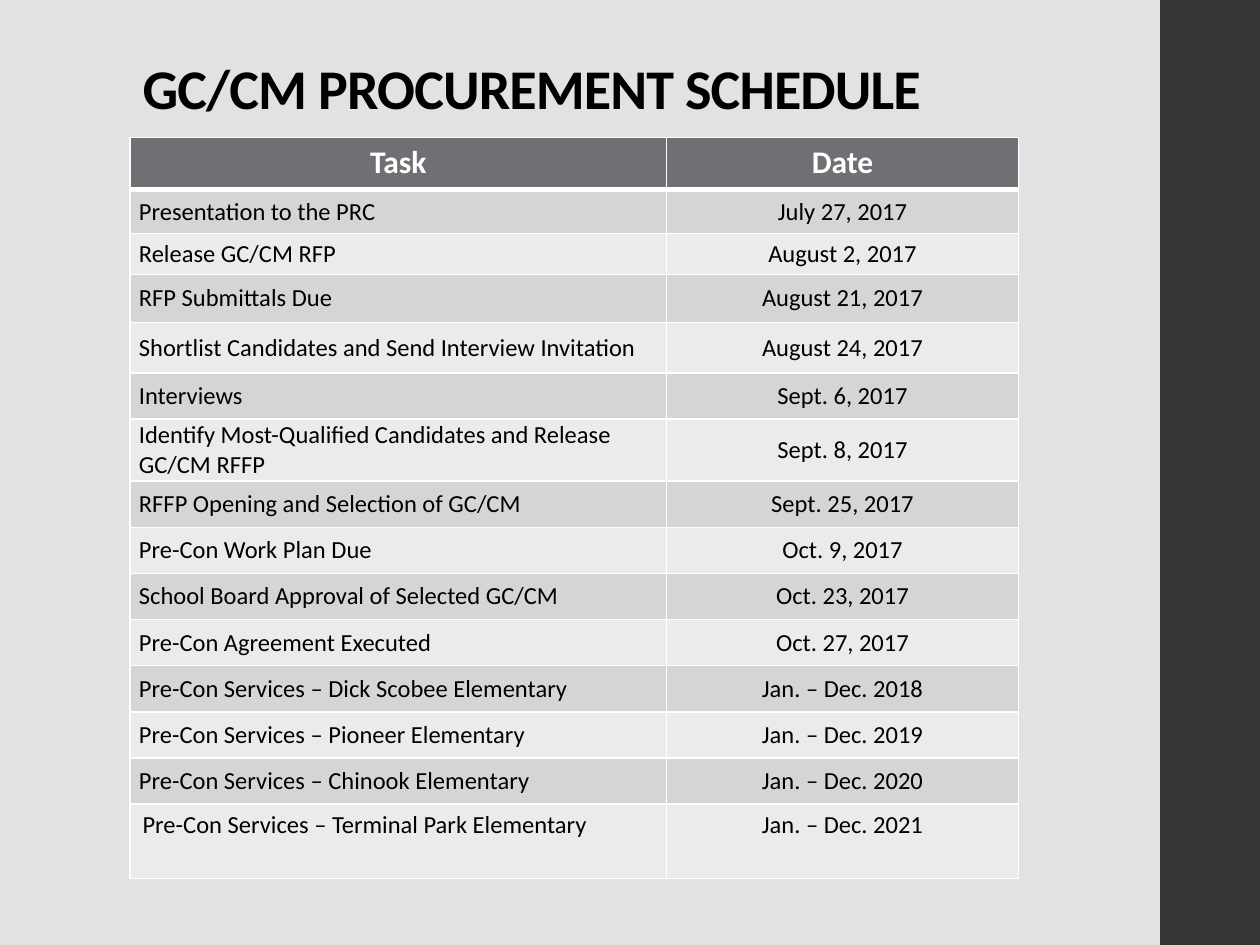
from pptx import Presentation
from pptx.dml.color import RGBColor
from pptx.enum.shapes import MSO_SHAPE
from pptx.enum.text import MSO_ANCHOR, MSO_AUTO_SIZE, PP_ALIGN
from pptx.oxml.ns import qn
from pptx.util import Cm, Pt
from lxml.etree import SubElement

COLORS = {
    "background": "E2E2E3",
    "sidebar": "353537",
    "header": "6F6F74",
    "odd": "D5D5D6",
    "even": "EBEBEB",
    "white": "FFFFFF",
    "black": "000000",
}
SCHEDULE = [
    ("Task", "Date", 1.05),
    ("Presentation to the PRC", "July 27, 2017", 0.89),
    ("Release GC/CM RFP", "August 2, 2017", 0.82),
    ("RFP Submittals Due", "August 21, 2017", 0.97),
    ("Shortlist Candidates and Send Interview Invitation", "August 24, 2017", 1.02),
    ("Interviews", "Sept. 6, 2017", 0.93),
    ("Identify Most-Qualified Candidates and Release GC/CM RFFP", "Sept. 8, 2017", 1.25),
    ("RFFP Opening and Selection of GC/CM", "Sept. 25, 2017", 0.93),
    ("Pre-Con Work Plan Due", "Oct. 9, 2017", 0.93),
    ("School Board Approval of Selected GC/CM", "Oct. 23, 2017", 0.93),
    ("Pre-Con Agreement Executed", "Oct. 27, 2017", 0.93),
    ("Pre-Con Services – Dick Scobee Elementary", "Jan. – Dec. 2018", 0.93),
    ("Pre-Con Services – Pioneer Elementary", "Jan. – Dec. 2019", 0.93),
    ("Pre-Con Services – Chinook Elementary", "Jan. – Dec. 2020", 0.93),
    ("Pre-Con Services – Terminal Park Elementary", "Jan. – Dec. 2021", 1.5),
]


def add_run(paragraph, text, size, color, bold):
    run = paragraph.add_run()
    run.text = text
    run.font.name = "Calibri"
    run.font.size = Pt(size)
    run.font.bold = bold
    run.font.color.rgb = RGBColor.from_string(COLORS[color])
    return run


def add_borders(cell, bottom_width):
    properties = cell._tc.get_or_add_tcPr()
    for side, width in (("L", 1), ("R", 1), ("T", 1), ("B", bottom_width)):
        line = SubElement(properties, qn(f"a:ln{side}"), w=str(Pt(width)))
        fill = SubElement(line, qn("a:solidFill"))
        SubElement(fill, qn("a:srgbClr"), val=COLORS["white"])


presentation = Presentation()
presentation.slide_width = Cm(25.4)
presentation.slide_height = Cm(19.05)
slide = presentation.slides.add_slide(presentation.slide_layouts[5])
slide.background.fill.solid()
slide.background.fill.fore_color.rgb = RGBColor.from_string(COLORS["background"])

sidebar = slide.shapes.add_shape(MSO_SHAPE.RECTANGLE, Cm(23.39), Cm(0), Cm(2.01), Cm(19.05))
sidebar.shadow.inherit = False
sidebar.fill.solid()
sidebar.fill.fore_color.rgb = RGBColor.from_string(COLORS["sidebar"])
sidebar.line.fill.background()

title = slide.shapes.title
title.left, title.top, title.width, title.height = Cm(2.62), Cm(1.02), Cm(20.19), Cm(1.55)
title.text_frame.auto_size = MSO_AUTO_SIZE.NONE
title.text_frame.vertical_anchor = MSO_ANCHOR.BOTTOM
paragraph = title.text_frame.paragraphs[0]
paragraph.alignment = PP_ALIGN.LEFT
paragraph.line_spacing = 0.9
run = add_run(paragraph, "GC/CM PROCUREMENT SCHEDULE", 32, "black", True)
run.font._element.set("spc", "-50")

table = slide.shapes.add_table(
    len(SCHEDULE), 2, Cm(2.62), Cm(2.77), Cm(17.91), Cm(14.94)
).table
table.columns[0].width = Cm(10.82)
table.columns[1].width = Cm(7.09)

last = len(SCHEDULE) - 1
for index, (task, date, height) in enumerate(SCHEDULE):
    table.rows[index].height = Cm(height)
    is_header = index == 0
    fill_name = "header" if is_header else "odd" if index % 2 else "even"
    for column, text in enumerate((task, date)):
        cell = table.cell(index, column)
        add_borders(cell, 3 if is_header else 1)
        if index == 1:
            cell._tc.tcPr.find(qn("a:lnT")).set("w", str(Pt(3)))
        cell.fill.solid()
        cell.fill.fore_color.rgb = RGBColor.from_string(COLORS[fill_name])
        if 0 < index < last:
            cell.vertical_anchor = MSO_ANCHOR.MIDDLE
            cell.margin_left = cell.margin_right = Cm(0.18)
            cell.margin_top = cell.margin_bottom = Cm(0)
        paragraph = cell.text_frame.paragraphs[0]
        paragraph.alignment = PP_ALIGN.CENTER if is_header or column else PP_ALIGN.LEFT
        if is_header:
            add_run(paragraph, text, 18, "white", True)
        else:
            add_run(paragraph, text, 14, "black", False)

presentation.save("out.pptx")
